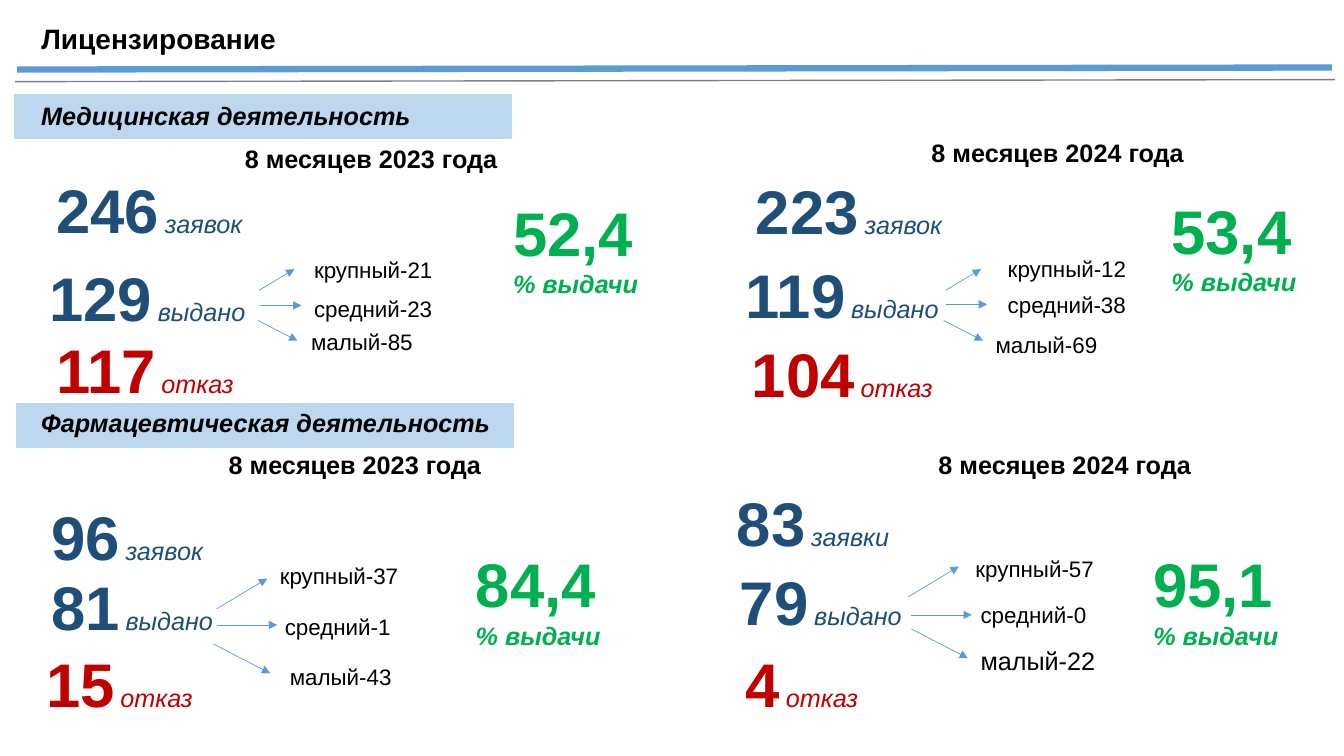
from dataclasses import dataclass

from lxml.etree import SubElement
from pptx import Presentation
from pptx.dml.color import RGBColor
from pptx.enum.shapes import MSO_CONNECTOR, MSO_SHAPE
from pptx.enum.text import MSO_ANCHOR, MSO_AUTO_SIZE, PP_ALIGN
from pptx.oxml.ns import qn
from pptx.util import Inches, Pt

BLACK = RGBColor(0x00, 0x00, 0x00)
BLUE = RGBColor(0x5B, 0x9B, 0xD5)
GREY = RGBColor(0x80, 0x80, 0x80)
PALE_BLUE = RGBColor(0xBD, 0xD7, 0xEE)
NAVY = RGBColor(0x1F, 0x4E, 0x79)
RED = RGBColor(0xC0, 0x00, 0x00)
GREEN = RGBColor(0x00, 0xB0, 0x50)

COUNT_COLORS = (NAVY, NAVY, RED)
MEDICAL_REACH = ((0.35, -0.21), (0.41, 0), (0.39, 0.2))
PHARMACY_REACH = ((0.5, -0.3), (0.6, 0), (0.56, 0.29))


@dataclass
class Period:
    """Figures of one period, with places relative to its panel."""

    heading: tuple
    counts: tuple
    sizes: tuple
    rate: tuple
    arrow_starts: tuple
    reach: tuple


PERIODS = {
    (0.3, 1.3): Period(
        ("8 месяцев 2023 года", 2.03, 0.07),
        (("246", "заявок", 0.16, 0.36), ("129", "выдано", 0.09, 1.23), ("117", "отказ", 0.16, 1.94)),
        (("крупный-21", 16, 2.66, 1.16), ("средний-23", 16, 2.66, 1.55), ("малый-85", 16, 2.63, 1.88)),
        ("52,4", 4.69, 0.58),
        ((2.27, 1.58), (2.28, 1.73), (2.26, 1.88)),
        MEDICAL_REACH,
    ),
    (7.2, 1.3): Period(
        ("8 месяцев 2024 года", 1.94, 0.01),
        (("223", "заявок", 0.2, 0.37), ("119", "выдано", 0.1, 1.2), ("104", "отказ", 0.16, 1.98)),
        (("крупный-12", 16, 2.64, 1.15), ("средний-38", 16, 2.64, 1.51), ("малый-69", 16, 2.52, 1.91)),
        ("53,4", 4.32, 0.56),
        ((2.18, 1.58), (2.18, 1.72), (2.16, 1.88)),
        MEDICAL_REACH,
    ),
    (0.3, 4.4): Period(
        ("8 месяцев 2023 года", 1.87, 0.01),
        (("96", "заявок", 0.11, 0.5), ("81", "выдано", 0.11, 1.2), ("15", "отказ", 0.06, 1.96)),
        (("крупный-37", 16, 2.32, 1.1), ("средний-1", 16, 2.37, 1.61), ("малый-43", 16, 2.42, 2.1)),
        ("84,4", 4.32, 0.97),
        ((1.85, 1.64), (1.85, 1.8), (1.82, 1.99)),
        PHARMACY_REACH,
    ),
    (7.2, 4.4): Period(
        ("8 месяцев 2024 года", 2.01, 0.01),
        (("83", "заявки", 0.01, 0.36), ("79", "выдано", 0.04, 1.15), ("4", "отказ", 0.1, 1.96)),
        (("крупный-57", 16, 2.32, 1.03), ("средний-0", 16, 2.37, 1.49), ("малый-22", 18, 2.37, 1.95)),
        ("95,1", 4.14, 0.97),
        ((1.81, 1.52), (1.84, 1.7), (1.84, 1.84)),
        PHARMACY_REACH,
    ),
}


def add_run(paragraph, text, size, color=BLACK, bold=False, italic=False, font="Arial"):
    """Append one formatted run."""
    run = paragraph.add_run()
    run.text = text
    run.font.name = font
    run.font.size = Pt(size)
    run.font.bold = bold
    run.font.italic = italic
    run.font.color.rgb = color


def add_text_box(slide, left, top, width, height):
    """Add a wrapping text box and return its text frame."""
    box = slide.shapes.add_textbox(Inches(left), Inches(top), Inches(width), Inches(height))
    box.text_frame.word_wrap = True
    box.text_frame.auto_size = MSO_AUTO_SIZE.SHAPE_TO_FIT_TEXT
    return box.text_frame


def add_line(slide, start, end, color, width, arrow=False):
    """Draw a straight line, with an arrowhead at its end if asked."""
    points = [Inches(value) for value in (*start, *end)]
    line = slide.shapes.add_connector(MSO_CONNECTOR.STRAIGHT, *points)
    line.line.color.rgb = color
    line.line.width = Pt(width)
    if arrow:
        SubElement(line.line._get_or_add_ln(), qn("a:tailEnd"), type="triangle")
    SubElement(line._element.spPr, qn("a:effectLst"))


def add_header(slide, left, top, width, height):
    """Set the slide title and the two rules below it."""
    title = slide.shapes.title
    title.left, title.top = Inches(left), Inches(top)
    title.width, title.height = Inches(width), Inches(height)
    frame = title.text_frame
    frame.vertical_anchor = MSO_ANCHOR.TOP
    frame.auto_size = MSO_AUTO_SIZE.SHAPE_TO_FIT_TEXT
    frame.paragraphs[0].alignment = PP_ALIGN.LEFT
    add_run(frame.paragraphs[0], "Лицензирование", 20, bold=True)
    add_line(slide, (left - 0.14, top + 0.53), (left + 12.9, top + 0.51), BLUE, 4.5)
    add_line(slide, (left - 0.16, top + 0.65), (left + 12.93, top + 0.63), GREY, 1)


def add_activity(slide, name, left, top, text_top):
    """Add the band that names an activity."""
    band = slide.shapes.add_shape(
        MSO_SHAPE.RECTANGLE, Inches(left), Inches(top), Inches(4.92), Inches(0.43)
    )
    band.shadow.inherit = False
    band.fill.solid()
    band.fill.fore_color.rgb = PALE_BLUE
    band.line.color.rgb = PALE_BLUE
    band.line.width = Pt(1)
    frame = add_text_box(slide, 0.31, text_top, 4.9, 0.4)
    add_run(frame.paragraphs[0], name, 18, bold=True, italic=True)


def add_period(slide, left, top, period):
    """Add the heading, counts, sizes, arrows and rate of one period."""
    heading, x, y = period.heading
    frame = add_text_box(slide, left + x, top + y, 4.04, 0.4)
    add_run(frame.paragraphs[0], heading, 18, bold=True)

    for (number, label, x, y), color in zip(period.counts, COUNT_COLORS):
        paragraph = add_text_box(slide, left + x, top + y, 2.26, 0.84).paragraphs[0]
        add_run(paragraph, number, 44, color, bold=True)
        add_run(paragraph, " ", 18, font="Calibri")
        add_run(paragraph, label, 18, color, italic=True)

    for label, size, x, y in period.sizes:
        paragraph = add_text_box(slide, left + x, top + y, 1.9, 0.4).paragraphs[0]
        add_run(paragraph, " ", 18, font="Calibri")
        add_run(paragraph, label, size)

    for (x, y), (across, down) in zip(period.arrow_starts, period.reach):
        start = left + x, top + y
        add_line(slide, start, (start[0] + across, start[1] + down), BLUE, 0.5, arrow=True)

    rate, x, y = period.rate
    frame = add_text_box(slide, left + x, top + y, 1.55, 1.12)
    add_run(frame.paragraphs[0], rate, 44, GREEN, bold=True)
    add_run(frame.add_paragraph(), "% выдачи", 18, GREEN, bold=True, italic=True)


def main():
    """Build the licensing slide."""
    presentation = Presentation()
    presentation.slide_width = Inches(13.33)
    presentation.slide_height = Inches(7.5)
    slide = presentation.slides.add_slide(presentation.slide_layouts[5])
    add_header(slide, 0.31, 0.16, 4.9, 0.44)
    add_activity(slide, "Медицинская деятельность", 0.15, 0.94, 0.95)
    add_activity(slide, "Фармацевтическая деятельность", 0.17, 4.01, 3.99)
    for (left, top), period in PERIODS.items():
        add_period(slide, left, top, period)
    presentation.save("out.pptx")


if __name__ == "__main__":
    main()
